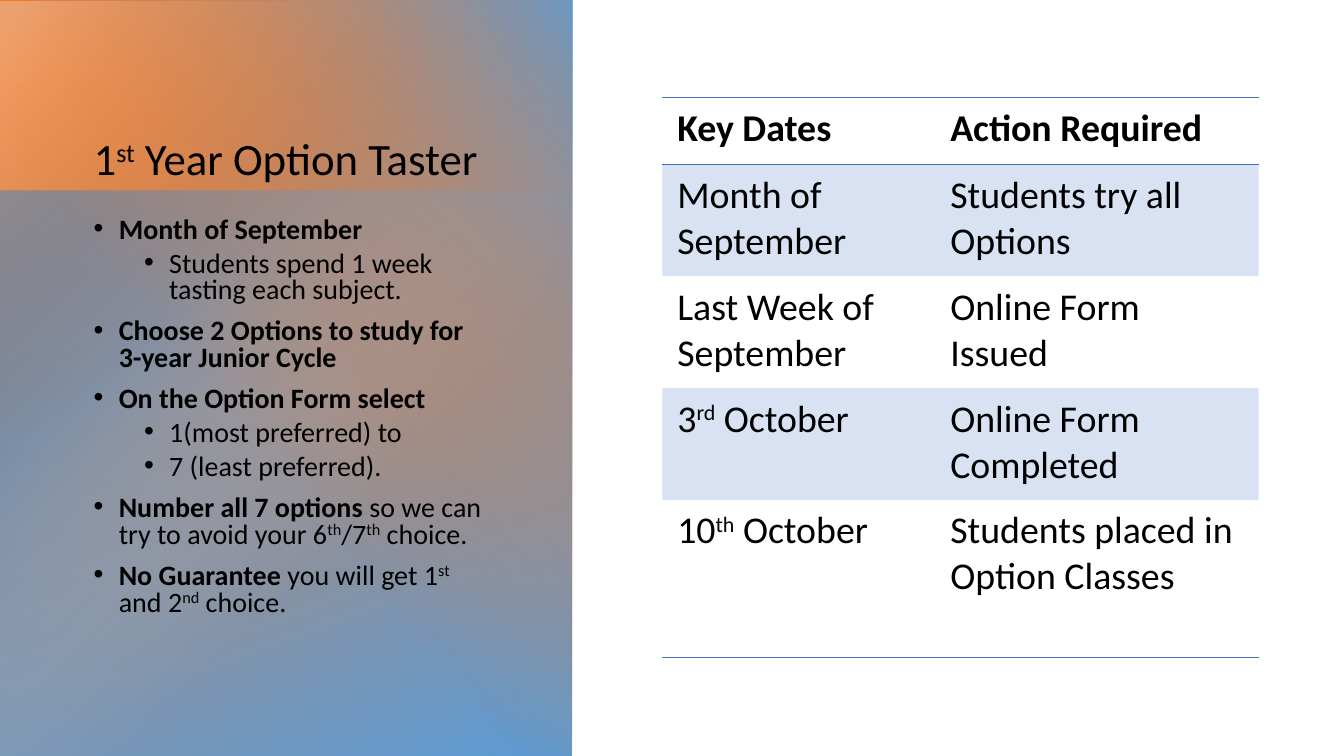
from pptx import Presentation
from pptx.dml.color import RGBColor
from pptx.enum.shapes import MSO_SHAPE as Shape
from pptx.enum.text import MSO_ANCHOR as Anchor
from pptx.oxml import parse_xml
from pptx.oxml.ns import nsdecls, qn
from pptx.util import Cm, Pt
from lxml.etree import SubElement

FONT = "Calibri"
BLACK = "000000"
BLUE = "4472C4"
NO_STYLE = "{2D5ABB26-0587-4C30-8999-92F81FD0307C}"
LINEAR = '<a:lin ang="{}" scaled="0"/>'
CORNER = '<a:path path="circle"><a:fillToRect r="100000" b="100000"/></a:path>'

PANEL_LAYERS = [
    ((-0.05, 0, 14.45, 19.13), 0, LINEAR.format(70 * 60000),
     [(7, "ED7D31", 100), (100, "5B9BD5", 100)]),
    ((-0.05, 4.8, 14.45, 14.3), 180, CORNER,
     [(0, "2E75B6", 100), (60, "9DC3E6", 0)]),
    ((-0.05, 0.03, 10.64, 19.1), 0, LINEAR.format(50 * 60000),
     [(3, "F4B183", 78), (42, "ED7D31", 0)]),
    ((-2.34, 2.31, 19.1, 14.45), 270, LINEAR.format(230 * 60000),
     [(0, "5B9BD5", 86), (57, "ED7D31", 0)]),
]
POINTS = [
    (0, "Month of September", ""),
    (1, "", "Students spend 1 week tasting each subject."),
    (0, "Choose 2 Options to study for 3-year Junior Cycle", ""),
    (0, "On the Option Form select", ""),
    (1, "", "1(most preferred) to"),
    (1, "", "7 (least preferred)."),
    (0, "Number all 7 options ", "so we can try to avoid your 6^th^/7^th^ choice."),
    (0, "No Guarantee ", "you will get 1^st^ and 2^nd^ choice."),
]
DATES = [
    ("Key Dates", "Action Required"),
    ("Month of September", "Students try all Options"),
    ("Last Week of September", "Online Form Issued"),
    ("3^rd^ October", "Online Form Completed"),
    ("10^th^ October", "Students placed in Option Classes"),
]


def color(value):
    """Turn a hex string into a colour."""
    return RGBColor.from_string(value)


def add_runs(paragraph, text, bold=None):
    """Add text whose ^marked^ parts are superscript."""
    for index, part in enumerate(text.split("^")):
        if part:
            run = paragraph.add_run()
            run.text = part
            if bold is not None:
                run.font.bold = bold
            if index % 2:
                run.font._element.set("baseline", "30000")


def set_font(paragraph, size, bold=None):
    """Set the font shared by all runs of a paragraph."""
    font = paragraph.font
    font.name, font.size, font.bold = FONT, Pt(size), bold
    font.color.rgb = color(BLACK)


def add_panel(slide, layers):
    """Stack the gradient rectangles of the left panel in a group."""
    group = slide.shapes.add_group_shape()
    for box, rotation, direction, stops in layers:
        shape = group.shapes.add_shape(Shape.RECTANGLE, *map(Cm, box))
        shape.rotation = rotation
        shape.shadow.inherit = False
        shape.line.fill.background()
        shape.fill.gradient()
        stop_list = "".join(
            f'<a:gs pos="{position * 1000}"><a:srgbClr val="{value}">'
            f'<a:alpha val="{alpha * 1000}"/></a:srgbClr></a:gs>'
            for position, value, alpha in stops)
        properties = shape._element.spPr
        properties.replace(properties.find(qn("a:gradFill")), parse_xml(
            f'<a:gradFill {nsdecls("a")} rotWithShape="1">'
            f'<a:gsLst>{stop_list}</a:gsLst>{direction}</a:gradFill>'))


def add_text_frame(slide, box, anchor):
    """Add a wrapping text box and return its text frame."""
    frame = slide.shapes.add_textbox(*map(Cm, box)).text_frame
    frame.word_wrap = True
    frame.vertical_anchor = anchor
    return frame


def add_title(slide, box, text):
    """Write the slide title at the bottom of its box."""
    paragraph = add_text_frame(slide, box, Anchor.BOTTOM).paragraphs[0]
    paragraph.line_spacing = 0.9
    add_runs(paragraph, text)
    set_font(paragraph, 32)


def add_points(slide, box, points):
    """Write the two-level bullet list."""
    frame = add_text_frame(slide, box, Anchor.TOP)
    for index, (level, lead, rest) in enumerate(points):
        paragraph = frame.add_paragraph() if index else frame.paragraphs[0]
        paragraph.level = level
        paragraph.line_spacing = 0.8
        if index:
            paragraph.space_before = Pt(5 if level else 10)
        properties = paragraph._p.get_or_add_pPr()
        properties.set("marL", str(Cm(1.905 if level else 0.635)))
        properties.set("indent", str(-Cm(0.635)))
        SubElement(properties, qn("a:buFont"), typeface="Arial")
        SubElement(properties, qn("a:buChar"), char="•")
        mixed = bool(lead and rest)
        add_runs(paragraph, lead, True if mixed else None)
        add_runs(paragraph, rest, False if mixed else None)
        set_font(paragraph, 20, None if mixed else bool(lead))


def add_border(cell, side):
    """Draw a thin blue line on one side of a cell."""
    cell._tc.get_or_add_tcPr().append(parse_xml(
        f'<a:{side} {nsdecls("a")} w="12700"><a:solidFill>'
        f'<a:srgbClr val="{BLUE}"/></a:solidFill></a:{side}>'))


def add_dates(slide, box, rows, widths, heights):
    """Add the table of key dates with every second row tinted."""
    frame = slide.shapes.add_table(len(rows), len(widths), *map(Cm, box))
    table = frame.table
    table.first_row = table.horz_banding = False
    table._tbl.tblPr.find(qn("a:tableStyleId")).text = NO_STYLE
    for column, width in zip(table.columns, widths):
        column.width = Cm(width)
    for row_index, (texts, height) in enumerate(zip(rows, heights)):
        row = table.rows[row_index]
        row.height = Cm(height)
        for cell, text in zip(row.cells, texts):
            cell.margin_left = cell.margin_right = Cm(0.38)
            cell.margin_top = cell.margin_bottom = Cm(0.2)
            paragraph = cell.text_frame.paragraphs[0]
            add_runs(paragraph, text)
            set_font(paragraph, 27, row_index == 0)
            if row_index == 0:
                add_border(cell, "lnT")
            if row_index in (0, len(rows) - 1):
                add_border(cell, "lnB")
            if row_index % 2:
                cell.fill.solid()
                cell.fill.fore_color.rgb = color(BLUE)
                tint = cell._tc.tcPr.find(".//" + qn("a:srgbClr"))
                SubElement(tint, qn("a:alpha"), val="20000")
            else:
                cell.fill.background()


def main():
    """Build and save the option taster slide."""
    presentation = Presentation()
    presentation.slide_width, presentation.slide_height = Cm(33.87), Cm(19.05)
    slide = presentation.slides.add_slide(presentation.slide_layouts[6])
    add_panel(slide, PANEL_LAYERS)
    add_title(slide, (2.11, 2.06, 10.29, 2.74), "1^st^ Year Option Taster")
    add_points(slide, (2.11, 5.36, 10.29, 11.28), POINTS)
    add_dates(slide, (16.69, 2.46, 15.03, 14.1), DATES,
              (6.88, 8.15), (1.68, 2.82, 2.82, 2.82, 3.96))
    presentation.save("out.pptx")


if __name__ == "__main__":
    main()
